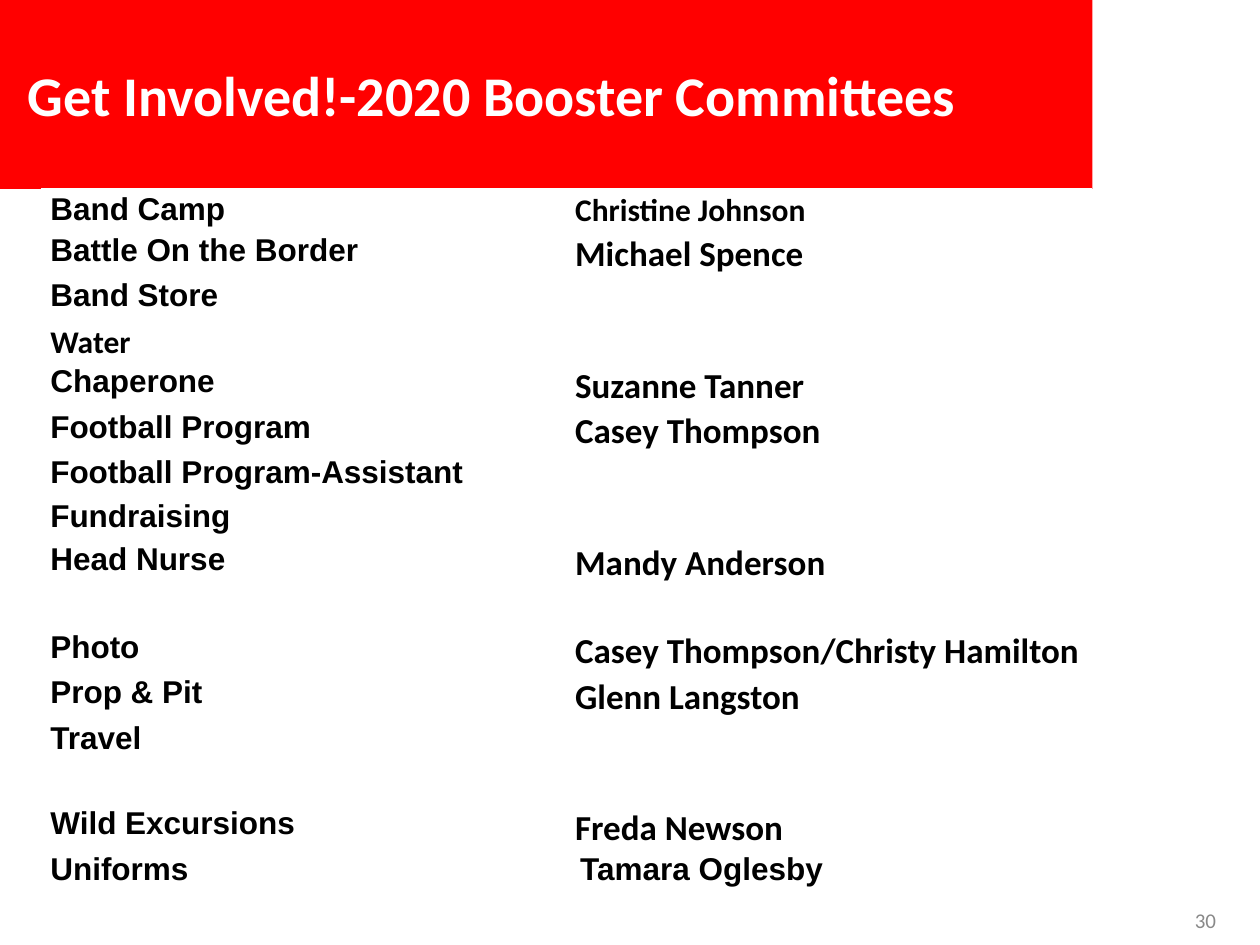
from lxml.etree import SubElement
from pptx import Presentation
from pptx.dml.color import RGBColor
from pptx.enum.text import MSO_ANCHOR, PP_ALIGN
from pptx.oxml.ns import qn
from pptx.util import Inches, Pt

COLORS = {"red": "FF0000", "white": "FFFFFF", "black": "000000", "gray": "898989"}

TITLE = {"name": "Calibri", "size": Pt(32), "bold": True}
NUMBER = {"name": "Calibri", "size": Pt(12)}
COMMITTEE = {"name": "Arial", "size": Pt(18), "bold": True}
SMALL = {"name": "Calibri", "size": Pt(18), "bold": True}
LEADER = {"name": "Calibri", "size": Pt(20), "bold": True}

# Row height, committee, leader
ROWS = [
    (0.33, "Band Camp", "Christine Johnson"),
    (0.36, "Battle On the Border", "Michael Spence"),
    (0.36, "Band Store", ""),
    (0.32, "Water", ""),
    (0.36, "Chaperone", "Suzanne Tanner"),
    (0.36, "Football Program", "Casey Thompson"),
    (0.35, "Football Program-Assistant", ""),
    (0.34, "Fundraising", ""),
    (0.36, "Head Nurse", "Mandy Anderson"),
    (0.34, "", ""),
    (0.36, "Photo", "Casey Thompson/Christy Hamilton"),
    (0.36, "Prop & Pit", "Glenn Langston"),
    (0.36, "Travel", ""),
    (0.32, "", ""),
    (0.36, "Wild Excursions", "Freda Newson"),
    (0.36, "Uniforms", "Tamara Oglesby"),
]
EXCEPTIONS = {"Water": SMALL, "Christine Johnson": SMALL, "Tamara Oglesby": COMMITTEE}


def rgb(name):
    return RGBColor.from_string(COLORS[name])


def write(p, text, fmt, color):
    r = p.add_run()
    r.text = text
    for key, value in fmt.items():
        setattr(r.font, key, value)
    r.font.color.rgb = rgb(color)


def set_borders(cell, bottom):
    tcPr = cell._tc.get_or_add_tcPr()
    for i, (side, width) in enumerate((("L", 1), ("R", 1), ("T", 1), ("B", bottom))):
        ln = tcPr.makeelement(qn(f"a:ln{side}"), {"w": str(Pt(width))})
        fill = SubElement(ln, qn("a:solidFill"))
        SubElement(fill, qn("a:srgbClr"), val=COLORS["white"])
        tcPr.insert(i, ln)


def add_title(s, left, top, width, height):
    sp = s.shapes.title
    sp.left, sp.top, sp.width, sp.height = left, top, width, height
    sp.fill.solid()
    sp.fill.fore_color.rgb = rgb("red")
    tf = sp.text_frame
    tf.vertical_anchor = MSO_ANCHOR.MIDDLE
    tf.margin_left = Inches(0.22)
    p = tf.paragraphs[0]
    p.alignment = PP_ALIGN.LEFT
    write(p, "Get Involved!-2020 Booster Committees", TITLE, "white")


def fill_cell(cell, text, fmt, bottom):
    cell.fill.background()
    cell.margin_left = cell.margin_right = Inches(0.07)
    cell.margin_top = cell.margin_bottom = 0
    set_borders(cell, bottom)
    p = cell.text_frame.paragraphs[0]
    p.line_spacing = 1.07
    if text:
        write(p, text, EXCEPTIONS.get(text, fmt), "black")


def add_committees(s, left, top, width):
    height = Inches(sum(row[0] for row in ROWS))
    table = s.shapes.add_table(len(ROWS), 2, left, top, width, height).table
    table.first_row = table.horz_banding = False
    for i, (row_height, committee, leader) in enumerate(ROWS):
        table.rows[i].height = Inches(row_height)
        bottom = 3 if i == 0 else 1
        fill_cell(table.cell(i, 0), committee, COMMITTEE, bottom)
        fill_cell(table.cell(i, 1), leader, LEADER, bottom)
    table.cell(len(ROWS) - 1, 1).margin_left = Inches(0.11)


def add_page_number(s, left, top, width, height):
    tf = s.shapes.add_textbox(left, top, width, height).text_frame
    tf.word_wrap = True
    tf.vertical_anchor = MSO_ANCHOR.MIDDLE
    p = tf.paragraphs[0]
    p.alignment = PP_ALIGN.RIGHT
    write(p, "30", NUMBER, "gray")


def main():
    prs = Presentation()
    prs.slide_width, prs.slide_height = Inches(10), Inches(7.5)
    s = prs.slides.add_slide(prs.slide_layouts[5])
    add_title(s, 0, 0, Inches(8.67), Inches(1.5))
    add_page_number(s, Inches(7.42), Inches(7.1), Inches(2.33), Inches(0.4))
    add_committees(s, Inches(0.33), Inches(1.5), Inches(8.33))
    prs.save("out.pptx")


if __name__ == "__main__":
    main()
